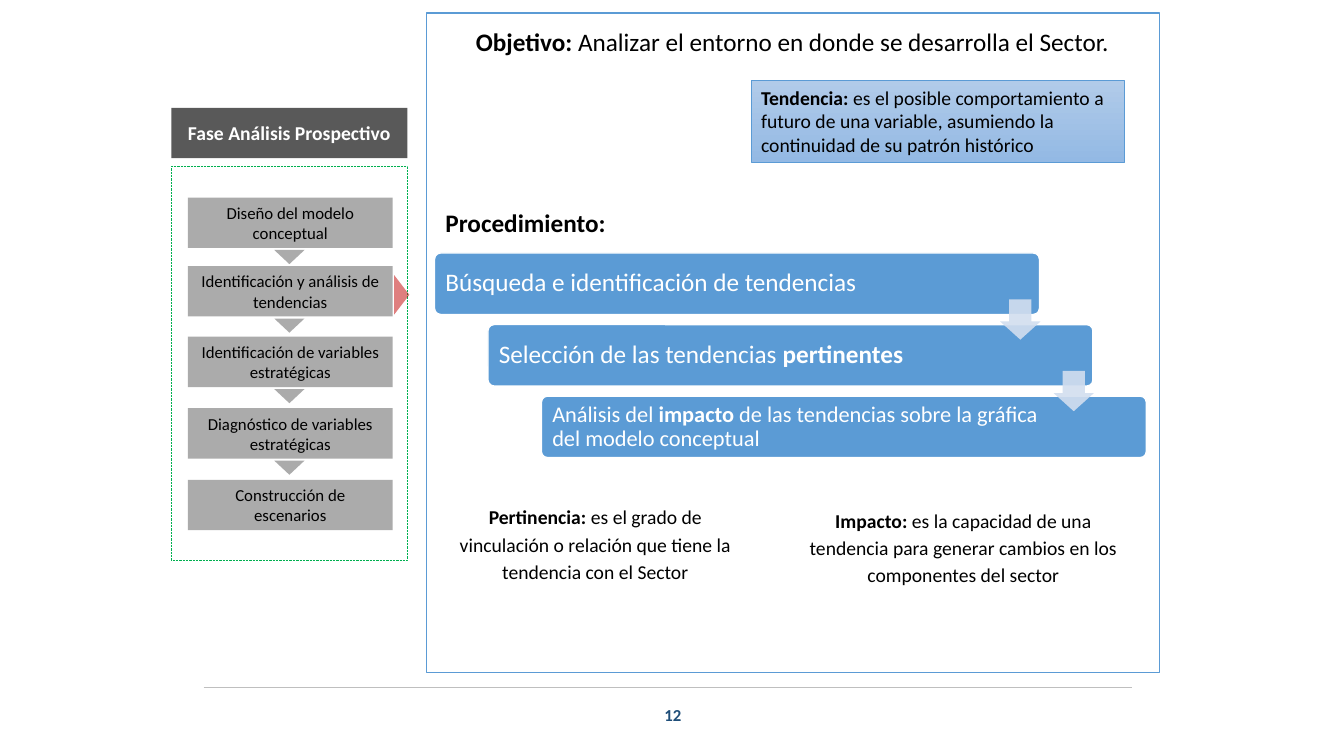
from pptx import Presentation
from pptx import util as u
from pptx.dml.color import RGBColor
from pptx.enum import dml, shapes, text
from pptx.oxml.ns import qn
from lxml import etree

# Content: *asterisks* mark bold words
objective = "*Objetivo:* Analizar el entorno en donde se desarrolla el Sector."
trend = ("*Tendencia:* es el posible comportamiento a futuro de una variable, "
         "asumiendo la continuidad de su patrón histórico")
phase = "*Fase Análisis Prospectivo*"
stages = [  # row of the grid, label
    (19.6, "Diseño del modelo conceptual"),
    (26.4, "Identificación y análisis de tendencias"),
    (33.4, "Identificación de variables estratégicas"),
    (40.5, "Diagnóstico de variables estratégicas"),
    (47.6, "Construcción de escenarios"),
]
current_stage = 1
procedure = "*Procedimiento:*"
steps = [  # label, size
    ("Búsqueda e identificación de tendencias", 18),
    ("Selección de las tendencias *pertinentes*", 18),
    ("Análisis del *impacto* de las tendencias sobre la gráfica "
     "del modelo conceptual", 16),
]
definitions = [  # column, row, width, wording
    (43.3, 49.3, 31.5, "*Pertinencia:* es el grado de vinculación o relación "
                       "que tiene la tendencia con el Sector"),
    (78.8, 49.6, 33.5, "*Impacto:* es la capacidad de una tendencia para "
                       "generar cambios en los componentes del sector"),
]
page = "*12*"

# Grid: 133.3 columns by 75 rows, square cells
COLS, ROWS = 133.3, 75
CELL = u.Inches(7.5) / ROWS
GREY, BLUE, PALE, RED = "595959", "5B9BD5", "D2DEEF", "C00000"
WHITE, BLACK = "FFFFFF", "000000"
LEFT, CENTER = text.PP_ALIGN.LEFT, text.PP_ALIGN.CENTER
TOP, MIDDLE = text.MSO_ANCHOR.TOP, text.MSO_ANCHOR.MIDDLE
KIND = shapes.MSO_SHAPE


def cells(*counts):
    return [u.Emu(round(n * CELL)) for n in counts]


def paint(color, value, opacity=100):
    color.rgb = RGBColor.from_string(value)
    if opacity < 100:
        for node in color._xFill.iter(qn("a:srgbClr")):
            etree.SubElement(node, qn("a:alpha"), val=str(opacity * 1000))


def write(holder, wording, size=12, color=BLACK, align=CENTER, anchor=MIDDLE,
          spacing=None, wrap=True, inset=(1, 0.5, 1, 0.5)):
    frame = holder.text_frame
    frame.word_wrap, frame.vertical_anchor = wrap, anchor
    frame.auto_size = text.MSO_AUTO_SIZE.NONE
    (frame.margin_left, frame.margin_top,
     frame.margin_right, frame.margin_bottom) = cells(*inset)
    line = frame.paragraphs[0]
    line.alignment = align
    if spacing:
        line.line_spacing = spacing
    for i, part in enumerate(wording.split("*")):
        if part:
            run = line.add_run()
            run.text = part
            run.font.name, run.font.size = "Calibri", u.Pt(size)
            run.font.bold = i % 2 == 1
            paint(run.font.color, color)


def draw(kind, box, fill=None, opacity=100, line=None, width=1):
    shape = slide.shapes.add_shape(kind, *cells(*box))
    shape.shadow.inherit = False
    if fill:
        shape.fill.solid()
        paint(shape.fill.fore_color, fill, opacity)
    else:
        shape.fill.background()
    if line:
        paint(shape.line.color, line)
        shape.line.width = u.Pt(width)
    else:
        shape.line.fill.background()
    return shape


def label(box, wording, **style):
    write(slide.shapes.add_textbox(*cells(*box)), wording, **style)


deck = Presentation()
deck.slide_width, deck.slide_height = cells(COLS, ROWS)
slide = deck.slides.add_slide(deck.slide_layouts[5])

# Footer rule and page number
rule = slide.shapes.add_connector(shapes.MSO_CONNECTOR.STRAIGHT,
                                  *cells(20.2, 68.2, 112.3, 68.2))
paint(rule.line.color, "BFBFBF")
rule.line.width = u.Pt(0.75)
etree.SubElement(rule._element.spPr, qn("a:effectLst"))
label((55.1, 68.9, 23.3, 4), page, color="1F4E79")

# Phase column: heading, dotted frame, stages and the arrows between them
write(draw(KIND.RECTANGLE, (17, 10.7, 23.4, 5), GREY), phase, size=14, color=WHITE)
phase_frame = draw(KIND.RECTANGLE, (17, 16.5, 23.4, 39.1), line="00B050", width=0.5)
phase_frame.line.dash_style = dml.MSO_LINE.ROUND_DOT
stage_left, stage_w, stage_h = 18.65, 20.3, 5
for i, (row, stage) in enumerate(stages):
    write(draw(KIND.RECTANGLE, (stage_left, row, stage_w, stage_h), GREY, 50), stage)
    if i < len(stages) - 1:
        down = draw(KIND.ISOSCELES_TRIANGLE,
                    (27.2, row + stage_h + 0.2, 3, 1.4), GREY, 50)
        down.rotation = 180
    if i == current_stage:
        pointer = draw(KIND.ISOSCELES_TRIANGLE,
                       (37.9, row + 2.1, 3.9, 1.5), RED, 50)
        pointer.rotation = 90

# Main panel with the objective as title
draw(KIND.RECTANGLE, (42.3, 1.3, 72.7, 65.4), line=BLUE)
title = slide.shapes.title
title.left, title.top, title.width, title.height = cells(43.3, 2.1, 70.6, 7.1)
write(title, objective, size=18, anchor=TOP)

# Definition of a trend on a gradient
trend_box = draw(KIND.RECTANGLE, (74.5, 8, 37, 8.1), line=BLUE, width=0.5)
trend_box.fill.gradient()
trend_box.fill.gradient_angle = 270
for stop, shade in zip(trend_box.fill.gradient_stops, ("B1CBE9", "93B9E4")):
    paint(stop.color, shade)
write(trend_box, trend, size=14, align=LEFT, anchor=TOP)

# Procedure: staggered bars, each handing over to the next
label((43.2, 20.1, 18.6, 4), procedure, size=18, align=LEFT, anchor=TOP, wrap=False)
bar_left, bar_top, bar_w, bar_h = 43.1, 25.1, 60, 6.1
shift_x, shift_y = 5.3, 7.1
for i, (step, size) in enumerate(steps):
    bar = draw(KIND.ROUNDED_RECTANGLE,
               (bar_left + i * shift_x, bar_top + i * shift_y, bar_w, bar_h),
               BLUE, line=WHITE)
    bar.adjustments[0] = 0.1
    write(bar, step, size=size, color=WHITE, align=LEFT, spacing=0.9,
          inset=(0.9, 0.7, 10.1, 0.7))
for i in range(len(steps) - 1):
    handover = draw(KIND.DOWN_ARROW,
                    (bar_left + bar_w - 3.9 + i * shift_x,
                     bar_top + 4.6 + i * shift_y, 4, 4), PALE, 90)
    handover.adjustments[0], handover.adjustments[1] = 0.45, 0.55
    handover.adjustments[0], handover.adjustments[1] = 0.55, 0.45

# Definitions under the procedure
for col, row, width, wording in definitions:
    label((col, row, width, 9.1), wording, size=14, anchor=TOP, spacing=1.15)

deck.save("out.pptx")
